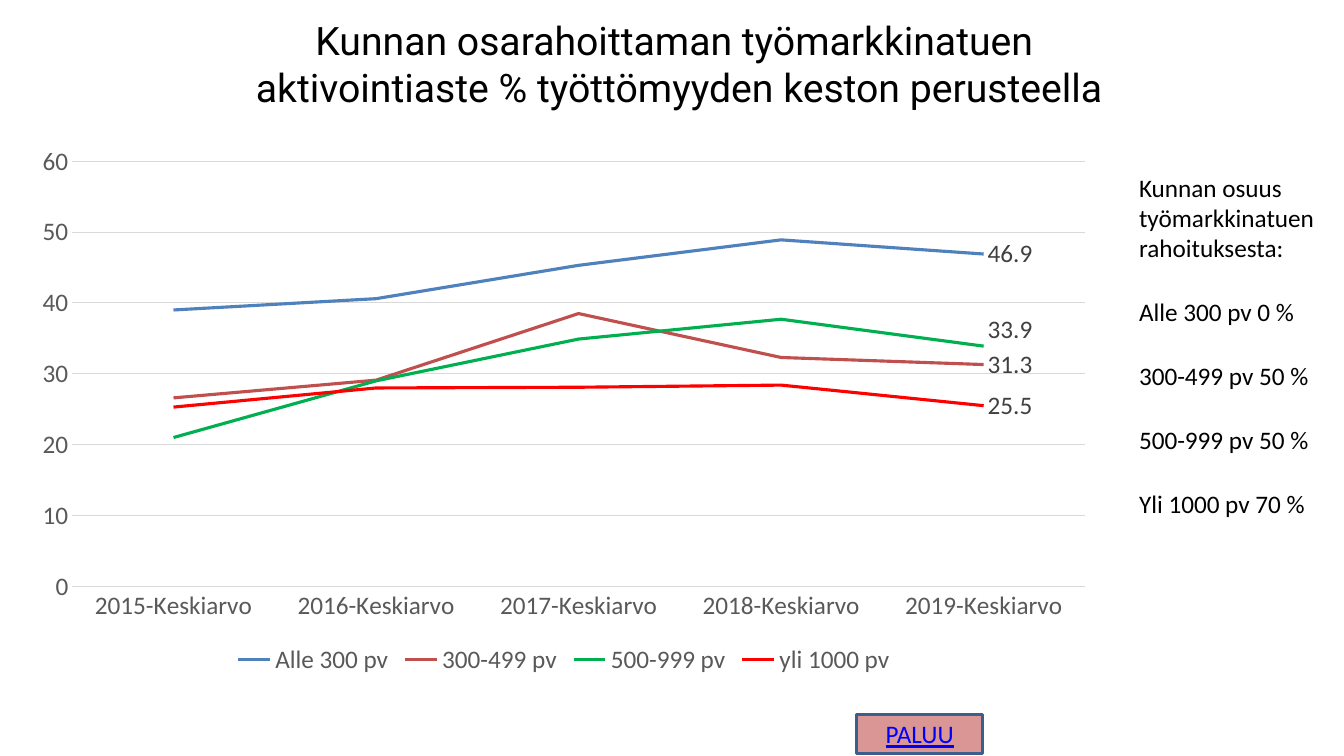
from lxml import etree
from pptx import Presentation
from pptx import util as u
from pptx.chart import data as cd
from pptx.dml import color
from pptx.enum import chart as ce
from pptx.enum import shapes, text
from pptx.oxml import ns

Pt = u.Pt
GREY, GRID, INK = "595959", "D9D9D9", "000000"
YEARS = [f"{year}-Keskiarvo" for year in range(2015, 2020)]
SERIES = [
    ("Alle 300 pv", "4F81BD", (39, 40.6, 45.3, 48.9, 46.9), 0),
    ("300-499 pv", "C0504D", (26.6, 29.1, 38.5, 32.3, 31.3), 0),
    ("500-999 pv", "00B050", (21, 29, 34.9, 37.7, 33.9), -0.03),
    ("yli 1000 pv", "FF0000", (25.3, 28, 28.1, 28.4, 25.5), 0),
]
SHARES = ["Kunnan osuus työmarkkinatuen rahoituksesta:", "Alle 300 pv 0 %",
          "300-499 pv 50 %", "500-999 pv 50 %", "Yli 1000 pv 70 %"]


def rgb(value):
    return color.RGBColor.from_string(value)


def style(font, size, value, name="Calibri"):
    font.size, font.name = Pt(size), name
    font.color.rgb = rgb(value)


def add_run(p, words, size, value=INK, name="Calibri"):
    r = p.add_run()
    r.text = words
    style(r.font, size, value, name)
    return r


def text_box(s, box):
    tf = s.shapes.add_textbox(*map(Pt, box)).text_frame
    tf.word_wrap = True
    return tf


def title(s, box):
    tf = text_box(s, box)
    tf.vertical_anchor = text.MSO_ANCHOR.MIDDLE
    p = tf.paragraphs[0]
    p.alignment = text.PP_ALIGN.CENTER
    add_run(p, "Kunnan osarahoittaman työmarkkinatuen ", 28, name="Roboto")
    p.add_line_break()
    add_run(p, "aktivointiaste % työttömyyden keston perusteella", 28, name="Roboto")


def share_list(s, box):
    tf = text_box(s, box)
    for i, words in enumerate(SHARES):
        p = tf.add_paragraph() if i else tf.paragraphs[0]
        if i:
            p.space_before = Pt(24)
        add_run(p, words, 18)


def return_button(s, box):
    sp = s.shapes.add_shape(shapes.MSO_SHAPE.RECTANGLE, *map(Pt, box))
    sp.shadow.inherit = False
    sp.fill.solid()
    sp.fill.fore_color.rgb = rgb("D99694")
    sp.line.color.rgb = rgb("3A5F8C")
    sp.line.width = Pt(2)
    tf = sp.text_frame
    tf.vertical_anchor = text.MSO_ANCHOR.MIDDLE
    p = tf.paragraphs[0]
    p.alignment = text.PP_ALIGN.CENTER
    add_run(p, "PALUU", 18, "0000FF").font.underline = True


def shift_label(series, dy):
    idx = series._element.find(".//" + ns.qn("c:dLbl")).find(ns.qn("c:idx"))
    layout = etree.Element(ns.qn("c:layout"))
    manual = etree.SubElement(layout, ns.qn("c:manualLayout"))
    for tag, value in (("c:x", 0), ("c:y", dy)):
        etree.SubElement(manual, ns.qn(tag)).set("val", str(value))
    idx.addnext(layout)


def style_axis(axis):
    axis.major_tick_mark = axis.minor_tick_mark = ce.XL_TICK_MARK.NONE
    style(axis.tick_labels.font, 18, GREY)


def activation_chart(s, box):
    data = cd.CategoryChartData()
    data.categories = YEARS
    for name, _, values, _ in SERIES:
        data.add_series(name, values)
    chart = s.shapes.add_chart(ce.XL_CHART_TYPE.LINE, *map(Pt, box), data).chart
    style(chart.font, 10, INK)
    chart.has_title = False
    chart.has_legend = True
    chart.legend.position = ce.XL_LEGEND_POSITION.BOTTOM
    chart.legend.include_in_layout = False
    style(chart.legend.font, 18, GREY)

    cat, val = chart.category_axis, chart.value_axis
    style_axis(cat)
    style_axis(val)
    val.minimum_scale, val.maximum_scale, val.major_unit = 0, 60, 10
    val.format.line.fill.background()
    val.has_major_gridlines = True
    for line in (cat.format.line, val.major_gridlines.format.line):
        line.color.rgb = rgb(GRID)
        line.width = Pt(0.75)

    plot = chart.plots[0]
    plot.vary_by_categories = False
    for series, (_, value, values, dy) in zip(plot.series, SERIES):
        series.smooth = False
        series.marker.style = ce.XL_MARKER_STYLE.NONE
        series.format.line.color.rgb = rgb(value)
        series.format.line.width = Pt(2.25)
        label = series.points[len(values) - 1].data_label
        style(label.font, 18, "404040")
        label.position = ce.XL_LABEL_POSITION.RIGHT
        if dy:
            shift_label(series, dy)


def main():
    prs = Presentation()
    prs.slide_width, prs.slide_height = Pt(960), Pt(540)
    s = prs.slides.add_slide(prs.slide_layouts[6])
    title(s, (53, 0, 864, 90))
    share_list(s, (806.5, 119.5, 153.5, 257))
    return_button(s, (612, 510.5, 90, 27.5))
    activation_chart(s, (15, 96.5, 775.5, 389))
    prs.save("out.pptx")


if __name__ == "__main__":
    main()
